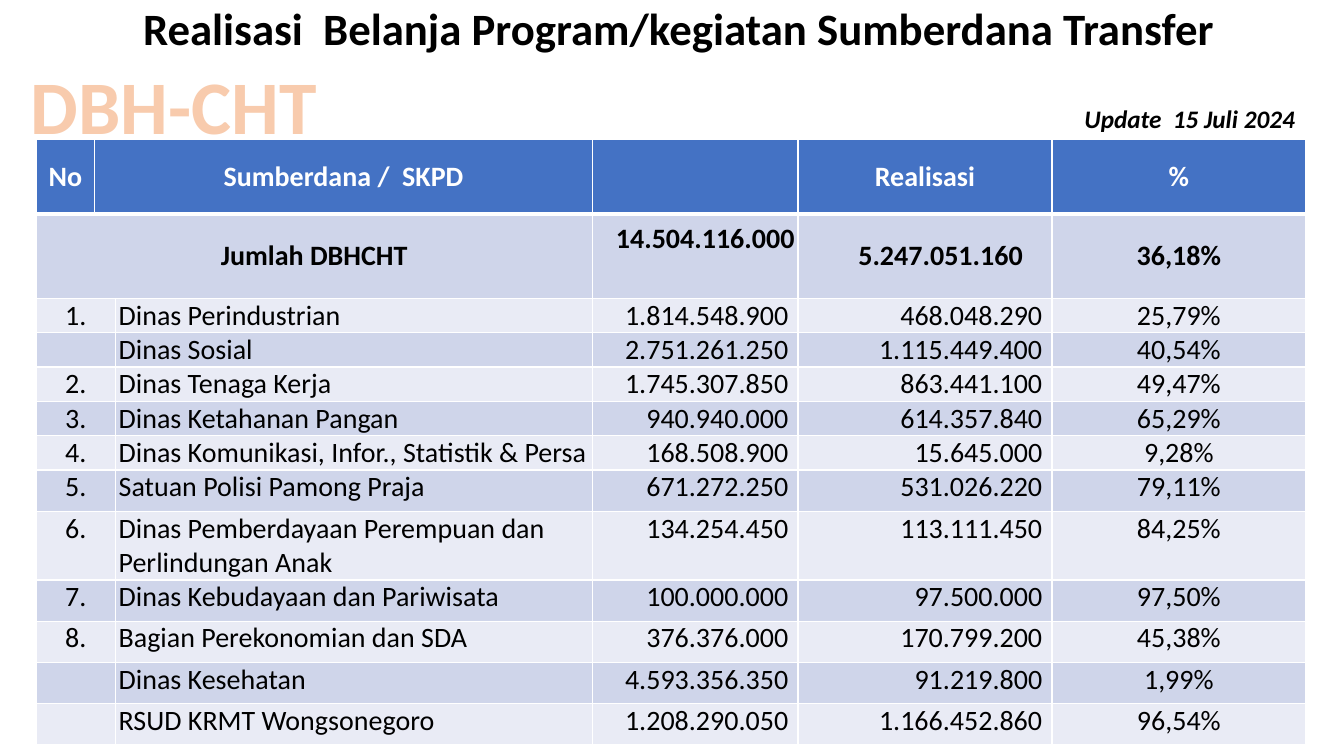
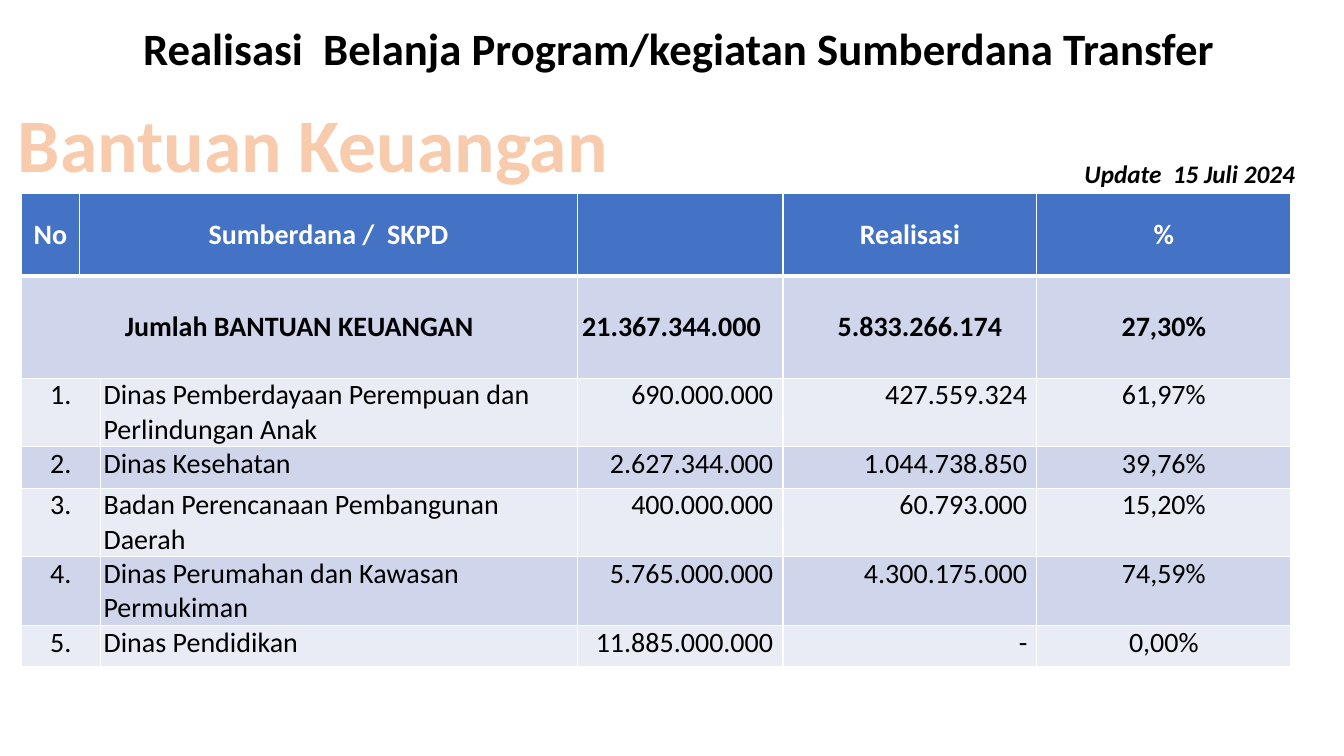
from lxml import etree
from pptx import Presentation
from pptx.dml.color import RGBColor
from pptx.enum import text
from pptx.oxml import ns
from pptx.util import Cm, Pt

# Content
TITLE = "Realisasi  Belanja Program/kegiatan Sumberdana Transfer"
UPDATE = "Update  15 Juli 2024"
HEADER = ["No", "Sumberdana /  SKPD", "", "", "Realisasi", "%"]
LINE, ROW, DOUBLE = 0.86, 1.04, 1.73  # row heights in cm

# The total holds its cell insets: right for both amounts, bottom for the first
SLIDES = [
    {
        "heading": "DBH-CHT", "heading_box": (0.48, 1.37, 7.8, 2.57),
        "title_height": 1.55, "update_top": 2.49,
        "table_at": (0.91, 3.51), "header_height": 1.88, "total_height": 2.13,
        "total": ["Jumlah DBHCHT", "14.504.116.000", "5.247.051.160", "36,18%"],
        "total_right": (0.08, 0.73), "total_bottom": LINE,
        "rows": [
            (LINE, "1.", "Dinas Perindustrian", "1.814.548.900", "468.048.290", "25,79%"),
            (LINE, "", "Dinas Sosial", "2.751.261.250", "1.115.449.400", "40,54%"),
            (LINE, "2.", "Dinas Tenaga Kerja", "1.745.307.850", "863.441.100", "49,47%"),
            (LINE, "3.", "Dinas Ketahanan Pangan", "940.940.000", "614.357.840", "65,29%"),
            (LINE, "4.", "Dinas Komunikasi, Infor., Statistik & Persa",
             "168.508.900", "15.645.000", "9,28%"),
            (ROW, "5.", "Satuan Polisi Pamong Praja", "671.272.250", "531.026.220", "79,11%"),
            (DOUBLE, "6.", "Dinas Pemberdayaan Perempuan dan Perlindungan Anak",
             "134.254.450", "113.111.450", "84,25%"),
            (ROW, "7.", "Dinas Kebudayaan dan Pariwisata", "100.000.000", "97.500.000", "97,50%"),
            (ROW, "8.", "Bagian Perekonomian dan SDA", "376.376.000", "170.799.200", "45,38%"),
            (ROW, "", "Dinas Kesehatan", "4.593.356.350", "91.219.800", "1,99%"),
            (ROW, "", "RSUD KRMT Wongsonegoro", "1.208.290.050", "1.166.452.860", "96,54%"),
        ],
    },
    {
        "heading": "Bantuan Keuangan", "heading_box": (0.13, 2.31, 15.52, 2.57),
        "title_height": 2.57, "update_top": 3.86,
        "table_at": (0.53, 4.88), "header_height": 2.08, "total_height": 2.57,
        "total": ["Jumlah BANTUAN KEUANGAN", "21.367.344.000", "5.833.266.174", "27,30%"],
        "total_right": (0.55, 0.87), "total_bottom": 0,
        "rows": [
            (DOUBLE, "1.", "Dinas Pemberdayaan Perempuan dan Perlindungan Anak",
             "690.000.000", "427.559.324", "61,97%"),
            (ROW, "2.", "Dinas Kesehatan", "2.627.344.000", "1.044.738.850", "39,76%"),
            (DOUBLE, "3.", "Badan Perencanaan Pembangunan Daerah",
             "400.000.000", "60.793.000", "15,20%"),
            (DOUBLE, "4.", "Dinas Perumahan dan Kawasan Permukiman",
             "5.765.000.000", "4.300.175.000", "74,59%"),
            (ROW, "5.", "Dinas Pendidikan", "11.885.000.000", "-", "0,00%"),
        ],
    },
]

# Shared style
COLORS = {"black": "000000", "white": "FFFFFF", "header": "4472C4", "band": "CFD5EA",
          "light": "E9EBF5", "heading": "F8CBAD", "outline": "ED7D31"}
COLUMNS = [1.48, 0.52, 12.02, 5.18, 6.4, 6.4]
INSET, AMOUNT_INSET, HEADER_INSET = 0.08, 0.24, 0.25
LEFT, CENTER, RIGHT = text.PP_ALIGN.LEFT, text.PP_ALIGN.CENTER, text.PP_ALIGN.RIGHT
ALIGN = [CENTER, CENTER, LEFT, RIGHT, RIGHT, CENTER]
TITLE_FONT = {"size": Pt(32), "bold": True}
UPDATE_FONT = {"size": Pt(18), "bold": True, "italic": True}
HEADING_FONT = {"size": Pt(54), "bold": True}


def rgb(name):
    return RGBColor.from_string(COLORS[name])


def write(tf, words, font, color="black", align=LEFT):
    p = tf.paragraphs[0]
    p.alignment = align
    if not words:
        p.font.size = font["size"]
        return None
    r = p.add_run()
    r.text = words
    for name, value in {"name": "Calibri", **font}.items():
        setattr(r.font, name, value)
    r.font.color.rgb = rgb(color)
    return r


def add_line(parent, tag, points, color):
    ln = etree.SubElement(parent, ns.qn(tag), w=str(Pt(points)))
    fill = etree.SubElement(ln, ns.qn("a:solidFill"))
    etree.SubElement(fill, ns.qn("a:srgbClr"), val=COLORS[color])
    return ln


def add_label(s, box, words, font, color="black", align=LEFT):
    tf = s.shapes.add_textbox(*map(Cm, box)).text_frame
    tf.word_wrap = False
    tf.auto_size = text.MSO_AUTO_SIZE.SHAPE_TO_FIT_TEXT
    return write(tf, words, font, color, align)


def format_cell(cell, row, fill, insets):
    tcPr = cell._tc.get_or_add_tcPr()
    for side in "LRTB":
        under_header = (row, side) in ((0, "B"), (1, "T"))
        add_line(tcPr, f"a:ln{side}", 3 if under_header else 1, "white")
    cell.fill.solid()
    cell.fill.fore_color.rgb = rgb(fill)
    for side, value in zip(("left", "top", "right", "bottom"), insets):
        setattr(cell, f"margin_{side}", Cm(value))
    if row < 2:
        cell.vertical_anchor = text.MSO_ANCHOR.MIDDLE


def add_budget_table(s, d):
    label, *totals = d["total"]
    rows = [HEADER, [label, "", "", *totals]]
    rows += [[no, "", *values] for _, no, *values in d["rows"]]
    heights = [d["header_height"], d["total_height"], *(row[0] for row in d["rows"])]
    frame = s.shapes.add_table(len(rows), len(COLUMNS), *map(Cm, d["table_at"]),
                               Cm(sum(COLUMNS)), Cm(sum(heights)))
    table = frame.table
    table.horz_banding = False
    for column, width in zip(table.columns, COLUMNS):
        column.width = Cm(width)

    for i, (values, height) in enumerate(zip(rows, heights)):
        table.rows[i].height = Cm(height)
        fill = "header" if i == 0 else "band" if i % 2 else "light"
        for j, value in enumerate(values):
            cell = table.cell(i, j)
            right = AMOUNT_INSET if ALIGN[j] == RIGHT else INSET
            insets = [INSET, 0, right, 0]
            if i == 0:
                insets = [HEADER_INSET, 0.13, HEADER_INSET, 0.13]
            elif i == 1 and j in (3, 4):
                bottom = d["total_bottom"] if j == 3 else 0
                insets = [INSET, 0, d["total_right"][j - 3], bottom]
            format_cell(cell, i, fill, insets)
            write(cell.text_frame, value, {"size": Pt(20), "bold": i < 2},
                  "white" if i == 0 else "black", CENTER if i == 0 else ALIGN[j])
        first, last = {0: (1, 2), 1: (0, 2)}.get(i, (0, 1))
        table.cell(i, first).merge(table.cell(i, last))


def add_slide(prs, d):
    s = prs.slides.add_slide(prs.slide_layouts[5])

    # Title
    title = s.shapes.title
    title.left, title.top, title.width, title.height = map(
        Cm, (3.35, 0, 29.21, d["title_height"]))
    tf = title.text_frame
    tf.word_wrap = True
    tf.auto_size = text.MSO_AUTO_SIZE.NONE
    tf.vertical_anchor = text.MSO_ANCHOR.MIDDLE
    write(tf, TITLE, TITLE_FONT)
    tf.paragraphs[0].line_spacing = 0.9

    # Table, date and outlined heading
    add_budget_table(s, d)
    add_label(s, (27.08, d["update_top"], 5.87, 1.02), UPDATE, UPDATE_FONT)
    r = add_label(s, d["heading_box"], d["heading"], HEADING_FONT, "heading", CENTER)
    rPr = r.font._element
    rPr.insert(0, add_line(rPr, "a:ln", 1.75, "outline"))


def main():
    prs = Presentation()
    prs.slide_width, prs.slide_height = Cm(33.87), Cm(19.05)
    for d in SLIDES:
        add_slide(prs, d)
    prs.save("out.pptx")


if __name__ == "__main__":
    main()
